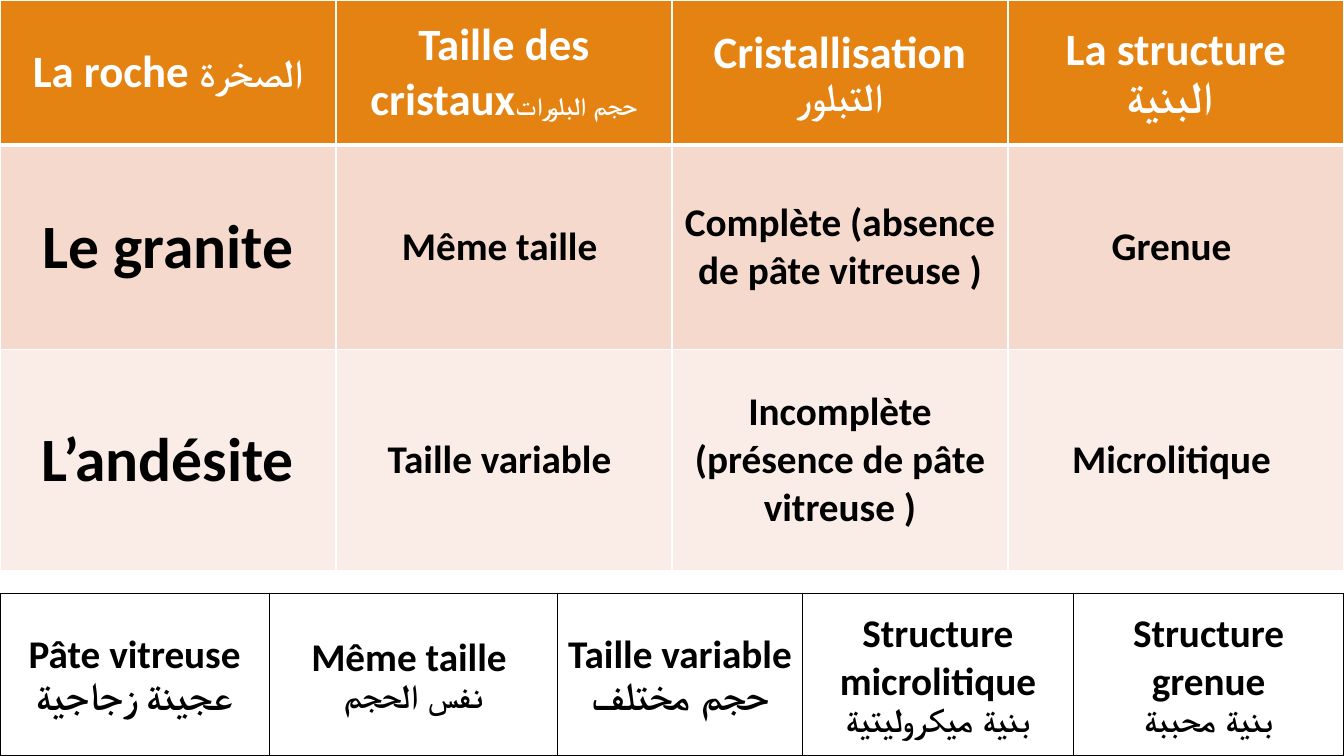
import pptx
import pptx.dml.color
import pptx.enum.text
import pptx.oxml
import pptx.oxml.ns
import pptx.util
from dataclasses import dataclass


@dataclass(frozen=True)
class Theme:
    font: str = "Calibri"
    white: str = "FFFFFF"
    black: str = "000000"
    header: str = "E48312"
    bands: tuple = ("F5D9CC", "FAEDE7")
    name: int = 44
    heading: int = 32
    body: int = 28
    small: int = 24
    tiny: int = 18
    thin: int = 1
    thick: int = 3


class Deck:
    def __init__(self, prs, theme):
        self.prs = prs
        self.theme = theme
        self.s = prs.slides.add_slide(prs.slide_layouts[6])

    def x(self, percent):
        return round(self.prs.slide_width * percent / 100)

    def y(self, percent):
        return round(self.prs.slide_height * percent / 100)

    def table(self, top, cols, rows):
        frame = self.s.shapes.add_table(
            len(rows), len(cols), 0, self.y(top), self.x(sum(cols)), self.y(sum(rows)))
        table = frame.table
        table.first_row = table.horz_banding = False
        for column, share in zip(table.columns, cols):
            column.width = self.x(share)
        for row, share in zip(table.rows, rows):
            row.height = self.y(share)
        return table

    def row(self, table, index, cells, fill, color, line, top=1, bottom=1):
        for cell, paragraphs in zip(table.rows[index].cells, cells):
            self.borders(cell, line, {"L": 1, "R": 1, "T": top, "B": bottom})
            cell.fill.solid()
            cell.fill.fore_color.rgb = pptx.dml.color.RGBColor.from_string(fill)
            cell.vertical_anchor = pptx.enum.text.MSO_ANCHOR.MIDDLE
            self.text(cell.text_frame, paragraphs, color)

    def text(self, tf, paragraphs, color):
        for i, runs in enumerate(paragraphs):
            p = tf.add_paragraph() if i else tf.paragraphs[0]
            p.alignment = pptx.enum.text.PP_ALIGN.CENTER
            p.font.name = self.theme.font
            p.font.bold = True
            p.font.color.rgb = pptx.dml.color.RGBColor.from_string(color)
            if len(runs) == 1:
                p.font.size = pptx.util.Pt(runs[0][1])
            for text, size in runs:
                r = p.add_run()
                r.text = text
                if len(runs) > 1:
                    r.font.size = pptx.util.Pt(size)

    def borders(self, cell, color, widths):
        tcPr = cell._tc.get_or_add_tcPr()
        for side, width in widths.items():
            tcPr.append(pptx.oxml.parse_xml(
                f'<a:ln{side} {pptx.oxml.ns.nsdecls("a")} w="{pptx.util.Pt(width)}">'
                f'<a:solidFill><a:srgbClr val="{color}"/></a:solidFill></a:ln{side}>'))


def main():
    prs = pptx.Presentation()
    prs.slide_width = pptx.util.Inches(13.33)
    prs.slide_height = pptx.util.Inches(7.5)
    t = Theme()
    deck = Deck(prs, t)

    headings = [
        [[("La roche ", t.heading), ("الصخرة", t.body)]],
        [[("Taille des cristaux", t.heading), ("حجم البلورات", t.tiny)]],
        [[("Cristallisation ", t.heading), ("التبلور", t.body)]],
        [[("La structure", t.heading)], [("البنية ", t.heading)]],
    ]
    rocks = [
        ("Le granite", "Même taille ", "Complète (absence de pâte vitreuse )", "Grenue "),
        ("L’andésite", "Taille variable ", "Incomplète (présence de pâte vitreuse )",
         "Microlitique "),
    ]
    comparison = deck.table(0, [25] * 4, [19.2, 27.07, 29.2])
    deck.row(comparison, 0, headings, t.header, t.white, t.white, bottom=t.thick)
    for i, (rock, fill) in enumerate(zip(rocks, t.bands), 1):
        sizes = [t.name] + [t.body] * 3
        cells = [[[(text, size)]] for text, size in zip(rock, sizes)]
        deck.row(comparison, i, cells, fill, t.black, t.white,
                 top=t.thick if i == 1 else t.thin)

    terms = [
        [[("Pâte vitreuse", t.body)], [("عجينة زجاجية", t.body)]],
        [[("Même taille  ", t.body), ("نفس الحجم", t.small)]],
        [[("Taille variable", t.body)], [("حجم مختلف", t.body)]],
        [[("Structure microlitique", t.body)], [("بنية ميكروليتية", t.small)]],
        [[("Structure grenue", t.body)], [("بنية محببة", t.small)]],
    ]
    glossary = deck.table(78.53, [20.03, 21.46, 18.23, 20.14, 20.14], [21.47])
    deck.row(glossary, 0, terms, t.white, t.black, t.black)

    prs.save("out.pptx")


if __name__ == "__main__":
    main()
